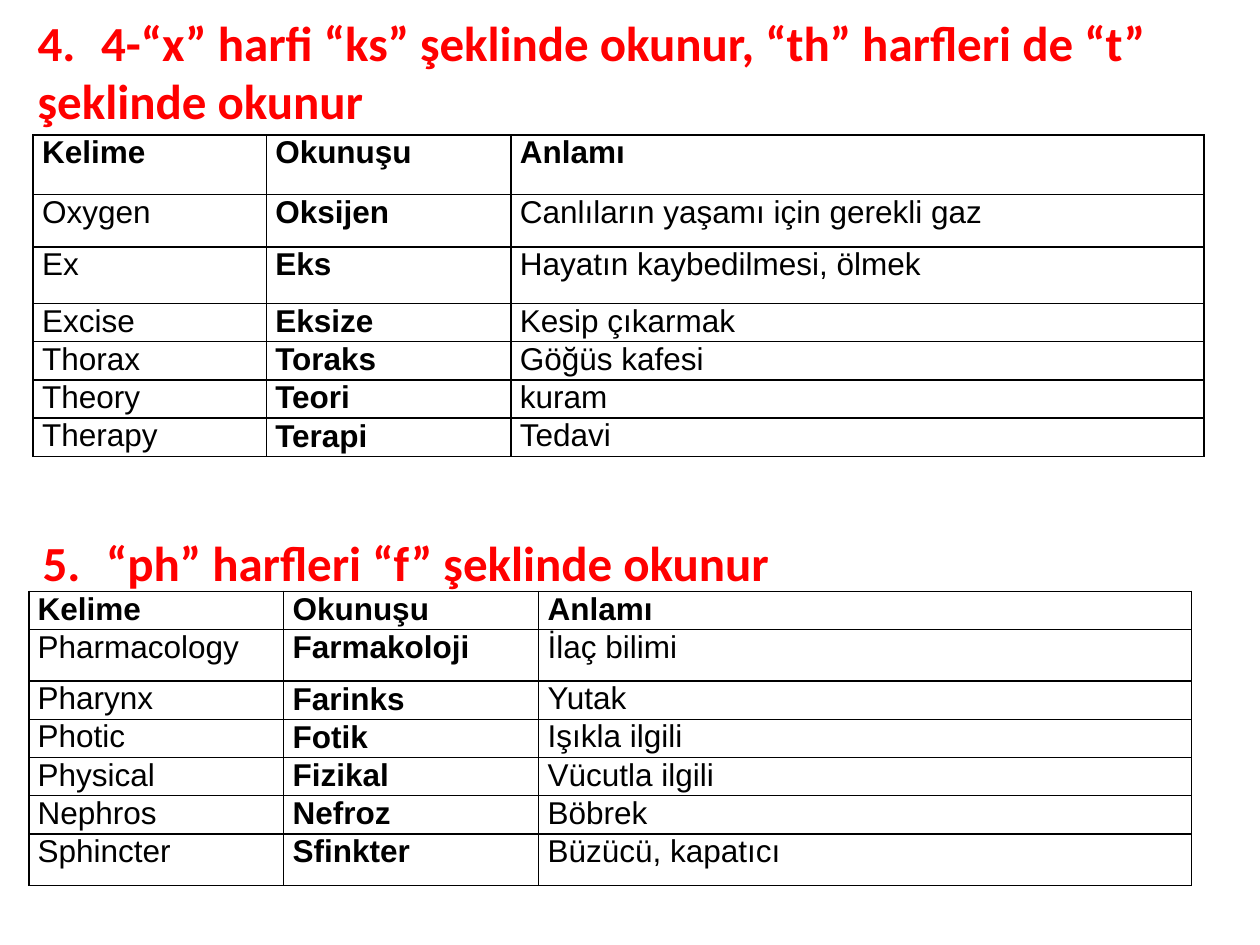
from lxml.etree import SubElement
from pptx import Presentation
from pptx.dml.color import RGBColor
from pptx.enum.text import MSO_ANCHOR as Anchor
from pptx.oxml import parse_xml
from pptx.oxml.ns import nsdecls, qn
from pptx.util import Cm, Pt


def style(font, color, **form):
    for key, value in form.items():
        setattr(font, key, value)
    font.color.rgb = RGBColor.from_string(color)


def frame(cell, color):
    """Draw a 1 pt line on all four sides of a table cell."""
    props = cell._tc.get_or_add_tcPr()
    for side in ("lnL", "lnR", "lnT", "lnB"):
        props.append(parse_xml(
            f'<a:{side} {nsdecls("a")} w="12700"><a:solidFill>'
            f'<a:srgbClr val="{color}"/></a:solidFill></a:{side}>'))


deck = Presentation()
deck.slide_width, deck.slide_height = Cm(25.4), Cm(19.05)
slide = deck.slides.add_slide(deck.slide_layouts[6])

head = {"name": "Calibri", "size": Pt(28), "bold": True}
body = {"name": "Arial", "size": Pt(18)}
edge = {"margin_left": 0, "margin_right": 0, "margin_top": 0, "margin_bottom": 0}

# Headings: text, then left, top, width and height in cm
titles = [
    ("4.\t4-“x” harfi “ks” şeklinde okunur, “th” harfleri de “t” şeklinde okunur",
     (0.51, 0.53, 24.2, 1.8)),
    ("5.\t“ph” harfleri “f” şeklinde okunur", (0.61, 10.52, 23.4, 1.6)),
]
for text, box in titles:
    block = slide.shapes.add_textbox(*map(Cm, box)).text_frame
    block.word_wrap = True
    block.vertical_anchor = Anchor.MIDDLE
    para = block.paragraphs[0]
    run = para.add_run()
    run.text = text
    style(run.font, "FF0000", **head)
    tabs = SubElement(para._p.get_or_add_pPr(), qn("a:tabLst"))
    SubElement(tabs, qn("a:tab"), pos=str(Cm(1.28)), algn="l")

# Tables: left and top, column widths, then row height with the row's words
top = ("Kelime", "Okunuşu", "Anlamı")
tables = [
    ((0.67, 2.72), (4.7, 4.93, 13.97), [
        (1.2, top),
        (1.06, ("Oxygen", "Oksijen", "Canlıların yaşamı için gerekli gaz")),
        (1.14, ("Ex", "Eks", "Hayatın kaybedilmesi, ölmek")),
        (0.77, ("Excise", "Eksize", "Kesip çıkarmak")),
        (0.77, ("Thorax", "Toraks", "Göğüs kafesi")),
        (0.77, ("Theory", "Teori", "kuram")),
        (0.77, ("Therapy", "Terapi", "Tedavi")),
    ]),
    ((0.58, 11.92), (5.14, 5.14, 13.16), [
        (0.77, top),
        (1.04, ("Pharmacology", "Farmakoloji", "İlaç bilimi")),
        (0.77, ("Pharynx", "Farinks", "Yutak")),
        (0.77, ("Photic", "Fotik", "Işıkla ilgili")),
        (0.77, ("Physical", "Fizikal", "Vücutla ilgili")),
        (0.77, ("Nephros", "Nefroz", "Böbrek")),
        (1.04, ("Sphincter", "Sfinkter", "Büzücü, kapatıcı")),
    ]),
]
for (left, high), cols, rows in tables:
    tall = sum(row[0] for row in rows)
    grid = slide.shapes.add_table(len(rows), len(cols), Cm(left), Cm(high),
                                  Cm(sum(cols)), Cm(tall)).table
    grid.first_row = grid.horz_banding = False
    for col, width in zip(grid.columns, cols):
        col.width = Cm(width)
    for r, (height, words) in enumerate(rows):
        grid.rows[r].height = Cm(height)
        for c, word in enumerate(words):
            cell = grid.cell(r, c)
            for key, value in edge.items():
                setattr(cell, key, value)
            frame(cell, "000000")
            cell.fill.background()
            bold = r == 0 or c == 1
            para = cell.text_frame.paragraphs[0]
            para.line_spacing = 1.01 if bold else 1.0
            para._p.get_or_add_pPr().set("marL", str(Cm(0.18)))
            run = para.add_run()
            run.text = word
            style(run.font, "000000", bold=bold, **body)

deck.save("out.pptx")
